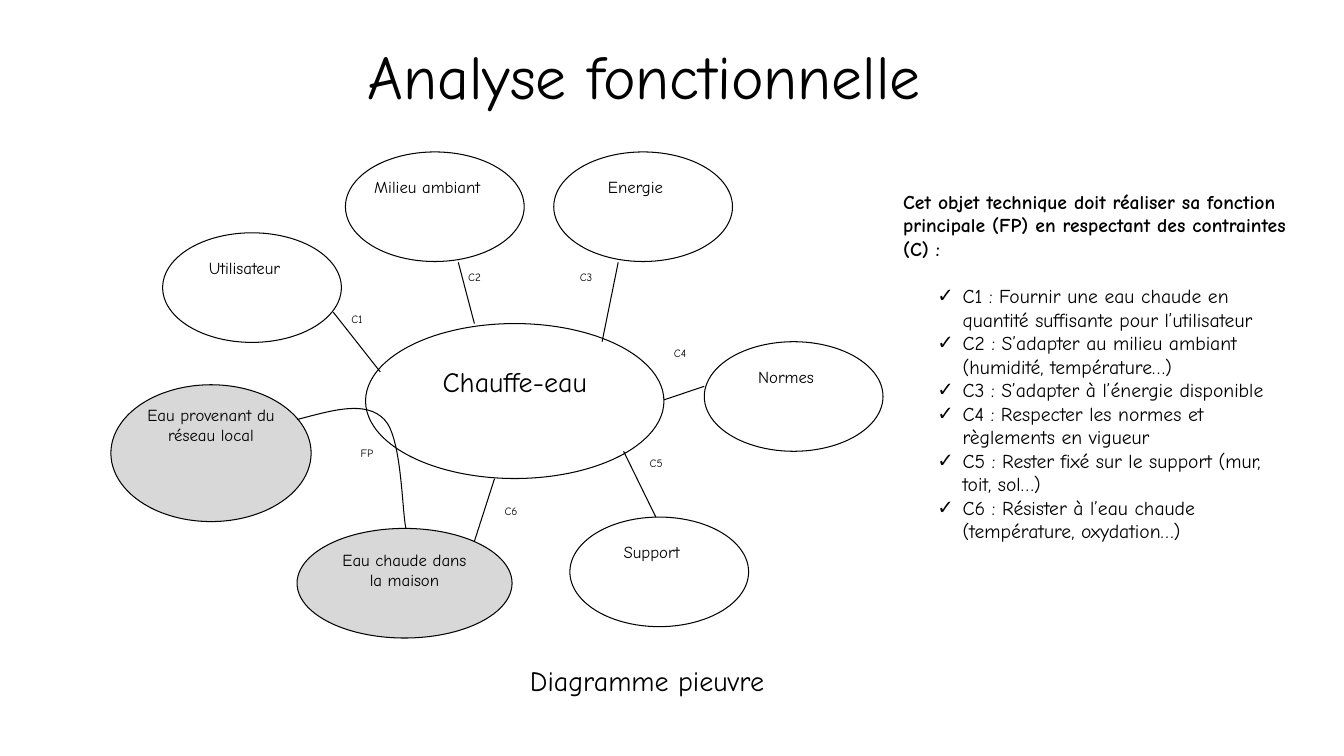
"""Build the functional analysis slide of a water heater."""
from dataclasses import dataclass

from lxml.etree import SubElement
from pptx import Presentation
from pptx.dml.color import RGBColor
from pptx.enum.shapes import MSO_CONNECTOR, MSO_SHAPE
from pptx.enum.text import MSO_ANCHOR, MSO_AUTO_SIZE, PP_ALIGN
from pptx.oxml.ns import qn
from pptx.util import Inches, Pt

WIDTH, HEIGHT = Inches(13.33), Inches(7.5)


@dataclass(frozen=True)
class Theme:
    font: str = "Comic Neue"
    ink: RGBColor = RGBColor(0, 0, 0)
    paper: RGBColor = RGBColor(255, 255, 255)
    flow: RGBColor = RGBColor(0xD8, 0xD8, 0xD8)
    stroke: float = 0.75
    title: int = 44
    heading: int = 20
    body: int = 14
    node: int = 12
    label: int = 8


THEME = Theme()
NODE_SIZE = (13.3, 14.5)
NODE_INSETS = (0, 0.09, 0.15, 0)
NODES = [
    ("Utilisateur", 12.1, 30.8),
    ("Milieu ambiant", 25.7, 20.1),
    ("Energie", 41.2, 20.1),
    ("Normes", 52.4, 45.2),
    ("Support", 42.4, 68.4),
]
LINKS = [
    ("C1", (25.4, 40.7), (24.8, 41.3), (28.3, 49.2)),
    ("C2", (34.1, 35.1), (34.1, 34.7), (35.3, 42.8)),
    ("C3", (42.4, 35.1), (46, 34.7), (44.8, 45.2)),
    ("C4", (49.4, 45.2), (49.4, 52.9), (52.4, 51.1)),
    ("C5", (47.6, 59.7), (46.4, 59.7), (48.8, 68.4)),
    ("C6", (36.8, 66), (36.8, 63.3), (35.3, 71.6)),
]
MAIN_FUNCTION = [
    (22.1, 55.5), (24.7, 54.3), (27.2, 52.9), (28.6, 55.5),
    (29.9, 57.9), (29.9, 67.5), (30.2, 69.9),
]
INTRODUCTION = (
    "Cet objet technique doit réaliser sa fonction principale (FP) "
    "en respectant des contraintes (C) :"
)
CONSTRAINTS = [
    "C1 : Fournir une eau chaude en quantité suffisante pour l’utilisateur",
    "C2 : S’adapter au milieu ambiant (humidité, température…)",
    "C3 : S’adapter à l’énergie disponible",
    "C4 : Respecter les normes et règlements en vigueur",
    "C5 : Rester fixé sur le support (mur, toit, sol…)",
    "C6 : Résister à l’eau chaude (température, oxydation…)",
]


def place(x, y):
    """Turn percentages of the slide into a point."""
    return int(WIDTH * x / 100), int(HEIGHT * y / 100)


def move(shape, x, y, width, height):
    """Set the position and size of a shape in percentages."""
    shape.left, shape.top = place(x, y)
    shape.width, shape.height = place(width, height)


def add_span(para, text, size, bold=False):
    """Add one formatted run."""
    span = para.add_run()
    span.text = text
    span.font.name = THEME.font
    span.font.size = Pt(size)
    span.font.bold = bold
    span.font.color.rgb = THEME.ink


def set_frame(shape, anchor=MSO_ANCHOR.TOP, insets=(0.1, 0.05, 0.1, 0.05)):
    """Set wrapping, anchor and insets, and return the text frame."""
    frame = shape.text_frame
    frame.word_wrap = True
    frame.auto_size = MSO_AUTO_SIZE.NONE
    frame.vertical_anchor = anchor
    frame.margin_left, frame.margin_top, frame.margin_right, frame.margin_bottom = map(
        Inches, insets
    )
    return frame


def set_stroke(shape):
    """Give a shape the common outline."""
    shape.line.color.rgb = THEME.ink
    shape.line.width = Pt(THEME.stroke)


def add_ellipse(page, text, box, size=THEME.node, fill=THEME.paper, insets=NODE_INSETS):
    """Add an ellipse that holds a centred name."""
    ellipse = page.shapes.add_shape(MSO_SHAPE.OVAL, 0, 0, 0, 0)
    move(ellipse, *box)
    ellipse.shadow.inherit = False
    ellipse.fill.solid()
    ellipse.fill.fore_color.rgb = fill
    set_stroke(ellipse)
    para = set_frame(ellipse, insets=insets).paragraphs[0]
    para.alignment = PP_ALIGN.CENTER
    add_span(para, text, size)


def add_text(page, text, box, size, align=PP_ALIGN.LEFT, anchor=MSO_ANCHOR.TOP):
    """Add a text box of one line."""
    shape = page.shapes.add_textbox(0, 0, 0, 0)
    move(shape, *box)
    para = set_frame(shape, anchor).paragraphs[0]
    para.alignment = align
    add_span(para, text, size)


def add_label(page, text, corner):
    """Add the small name of a link."""
    add_text(page, text, (*corner, 4.05, 6.27), THEME.label)


def add_link(page, start, end):
    """Add a straight link between two ellipses."""
    link = page.shapes.add_connector(MSO_CONNECTOR.STRAIGHT, *place(*start), *place(*end))
    set_stroke(link)
    SubElement(link._element.spPr, qn("a:effectLst"))


def add_curve(page, points):
    """Add a smooth open curve through groups of three control points."""
    start, *controls = [place(*point) for point in points]
    builder = page.shapes.build_freeform(*start)
    builder.add_line_segments(controls, close=False)
    curve = builder.convert_to_shape()
    curve.shadow.inherit = False
    curve.fill.background()
    set_stroke(curve)
    segments = curve._element.xpath(".//a:lnTo")
    outline = segments[0].getparent()
    for first in range(0, len(segments), 3):
        bend = SubElement(outline, qn("a:cubicBezTo"))
        for segment in segments[first:first + 3]:
            bend.append(segment[0])
            outline.remove(segment)


def set_bullet(para, left, hanging, mark=None):
    """Set the indents and the bullet of a paragraph."""
    properties = para._p.get_or_add_pPr()
    properties.set("marL", str(Inches(left)))
    properties.set("indent", str(-Inches(hanging)))
    if mark:
        SubElement(properties, qn("a:buChar")).set("char", mark)
    else:
        SubElement(properties, qn("a:buNone"))


def fill_title(page):
    """Write the title of the slide."""
    title = page.shapes.title
    move(title, 26.6, 4.3, 47.7, 11.2)
    para = set_frame(title).paragraphs[0]
    para.alignment = PP_ALIGN.LEFT
    add_span(para, "Analyse fonctionnelle", THEME.title)


def fill_constraints(page):
    """Write the introduction and the list of constraints."""
    body = page.placeholders[1]
    move(body, 65.7, 24.4, 30.9, 51.6)
    frame = set_frame(body)
    introduction = frame.paragraphs[0]
    introduction.space_before = Pt(0)
    set_bullet(introduction, 0.1, 0)
    add_span(introduction, INTRODUCTION, THEME.body, bold=True)
    for index, constraint in enumerate(CONSTRAINTS):
        para = frame.add_paragraph()
        para.space_before = Pt(0 if index else 17)
        set_bullet(para, 0.69, 0.25, "✓")
        add_span(para, constraint, THEME.body)


def main():
    """Build and save the slide."""
    deck = Presentation()
    deck.slide_width, deck.slide_height = WIDTH, HEIGHT
    page = deck.slides.add_slide(deck.slide_layouts[1])
    fill_title(page)
    fill_constraints(page)
    add_ellipse(page, "Chauffe-eau", (27.2, 42.8, 22.2, 20.5), THEME.heading,
                insets=(0.1, 0.18, 0.1, 0.05))
    for name, x, y in NODES:
        add_ellipse(page, name, (x, y, *NODE_SIZE))
    add_ellipse(page, "Eau provenant du réseau local", (8.25, 50.9, 14.9, 18.1),
                fill=THEME.flow, insets=(0, 0, 0, 0))
    add_ellipse(page, "Eau chaude dans la maison", (22.1, 69.9, 16, 14.5),
                fill=THEME.flow, insets=(0.1, 0.05, 0.1, 0.05))
    for name, corner, start, end in LINKS:
        add_link(page, start, end)
        add_label(page, name, corner)
    add_curve(page, MAIN_FUNCTION)
    add_label(page, "FP", (26.1, 58.4))
    add_text(page, "Diagramme pieuvre", (35, 85, 26.3, 9.9), THEME.heading,
             PP_ALIGN.CENTER, MSO_ANCHOR.MIDDLE)
    deck.save("out.pptx")


if __name__ == "__main__":
    main()
